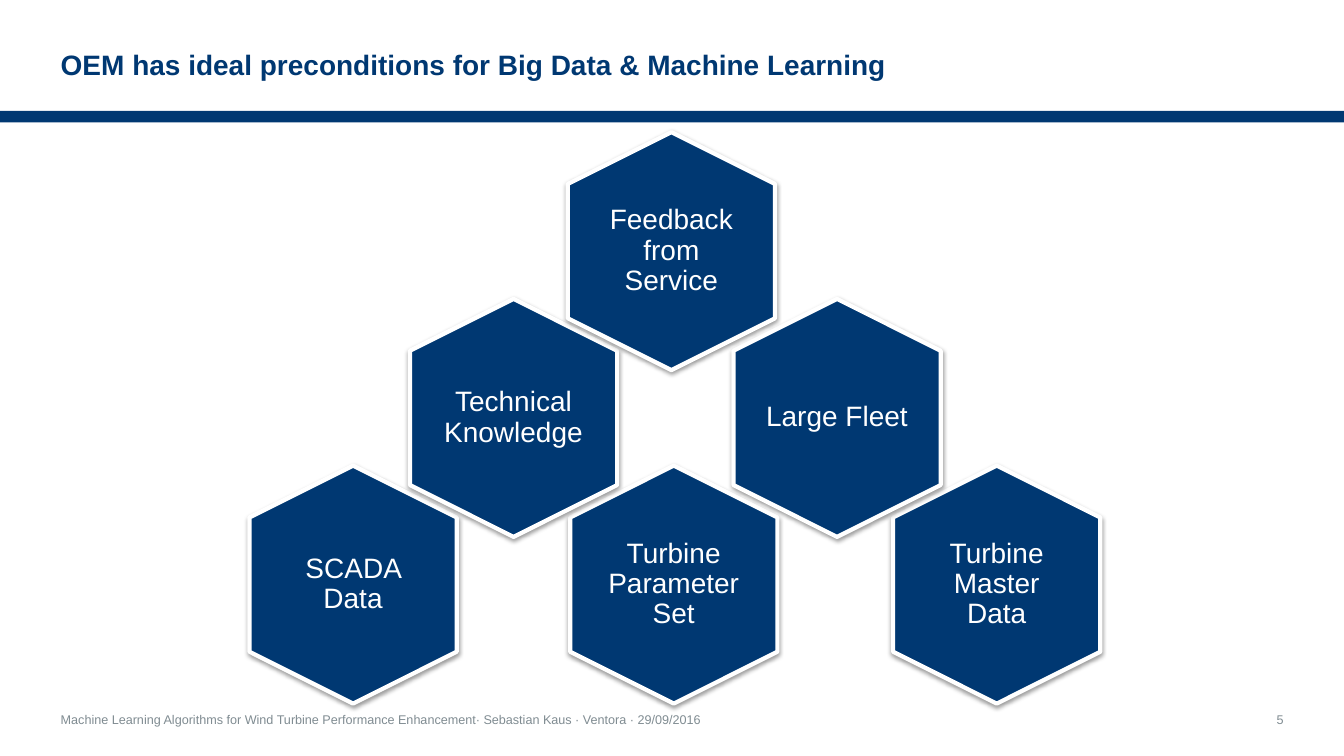
from lxml import etree
from pptx import Presentation
from pptx.dml.color import RGBColor
from pptx.enum import shapes, text
from pptx.oxml.ns import qn
from pptx.util import Pt

COLORS = {"navy": "003872", "white": "FFFFFF", "grey": "808C92", "black": "000000"}
ALIGN = text.PP_ALIGN
ANCHOR = text.MSO_ANCHOR


def rgb(name):
    return RGBColor.from_string(COLORS[name])


class Deck:
    """Holds the style and the current slide; all lengths are in points."""

    font = "Arial"
    hex_length, hex_width = 170, 148.1
    label_width, label_height = 103, 117.4

    def __init__(self, width, height):
        self.prs = Presentation()
        self.prs.slide_width, self.prs.slide_height = Pt(width), Pt(height)
        self.slide = self.prs.slides.add_slide(self.prs.slide_layouts[6])

    def text(self, words, box, size, color, bold=False, align=ALIGN.LEFT,
             anchor=ANCHOR.TOP, spacing=None, parent=None):
        target = (parent or self.slide).shapes
        tf = target.add_textbox(*map(Pt, box)).text_frame
        tf.word_wrap = True
        tf.vertical_anchor = anchor
        tf.margin_left = tf.margin_right = tf.margin_top = tf.margin_bottom = 0
        tf.text = words
        p = tf.paragraphs[0]
        p.alignment = align
        p.line_spacing = spacing
        for r in p.runs:
            r.font.name, r.font.size, r.font.bold = self.font, Pt(size), bold
            r.font.color.rgb = rgb(color)

    def shape(self, kind, box, fill, parent=None):
        sp = (parent or self.slide).shapes.add_shape(kind, *map(Pt, box))
        sp.shadow.inherit = False
        sp.fill.solid()
        sp.fill.fore_color.rgb = rgb(fill)
        sp.line.fill.background()
        return sp

    def drop_shadow(self, sp):
        effects = sp._element.spPr.find(qn("a:effectLst"))
        shadow = etree.SubElement(
            effects, qn("a:outerShdw"), blurRad=str(Pt(3.1)), dist=str(Pt(1.6)),
            dir="5400000", rotWithShape="0")
        color = etree.SubElement(shadow, qn("a:srgbClr"), val=COLORS["black"])
        etree.SubElement(color, qn("a:alpha"), val="38000")

    def hexagon(self, label, cx, cy):
        def centred(w, h):
            return cx - w / 2, cy - h / 2, w, h

        group = self.slide.shapes.add_group_shape()
        sp = self.shape(shapes.MSO_SHAPE.HEXAGON,
                        centred(self.hex_length, self.hex_width), "navy", group)
        sp.rotation = 90
        sp.line.color.rgb = rgb("white")
        sp.line.width = Pt(3)
        self.drop_shadow(sp)
        self.text(label, centred(self.label_width, self.label_height), 20, "white",
                  align=ALIGN.CENTER, anchor=ANCHOR.MIDDLE, spacing=0.9, parent=group)


def main():
    deck = Deck(960.48, 540)

    # Header
    deck.shape(shapes.MSO_SHAPE.RECTANGLE, (0, 79.2, 960.48, 8.2), "navy")
    deck.text("OEM has ideal preconditions for Big Data & Machine Learning",
              (43.4, 22.3, 731.5, 50.4), 20, "navy", bold=True,
              anchor=ANCHOR.MIDDLE, spacing=0.9)

    # Footer
    deck.text("Machine Learning Algorithms for Wind Turbine Performance Enhancement"
              "· Sebastian Kaus · Ventora · 29/09/2016",
              (43.4, 508.3, 793.4, 17.3), 9, "grey")
    deck.text("5", (875.5, 508.3, 41.8, 17.3), 9, "grey", align=ALIGN.RIGHT)

    # Pyramid of hexagons: (label, centre x) in each row, bottom row first
    bottom, row_step = 417.6, 119.1
    rows = [
        [("Turbine Master Data", 712.3), ("SCADA Data", 252.3),
         ("Turbine Parameter Set", 481.5)],
        [("Large Fleet", 598.2), ("Technical Knowledge", 367)],
        [("Feedback from Service", 479.8)],
    ]
    for i, row in enumerate(rows):
        for label, cx in row:
            deck.hexagon(label, cx, bottom - i * row_step)

    deck.prs.save("out.pptx")


if __name__ == "__main__":
    main()
